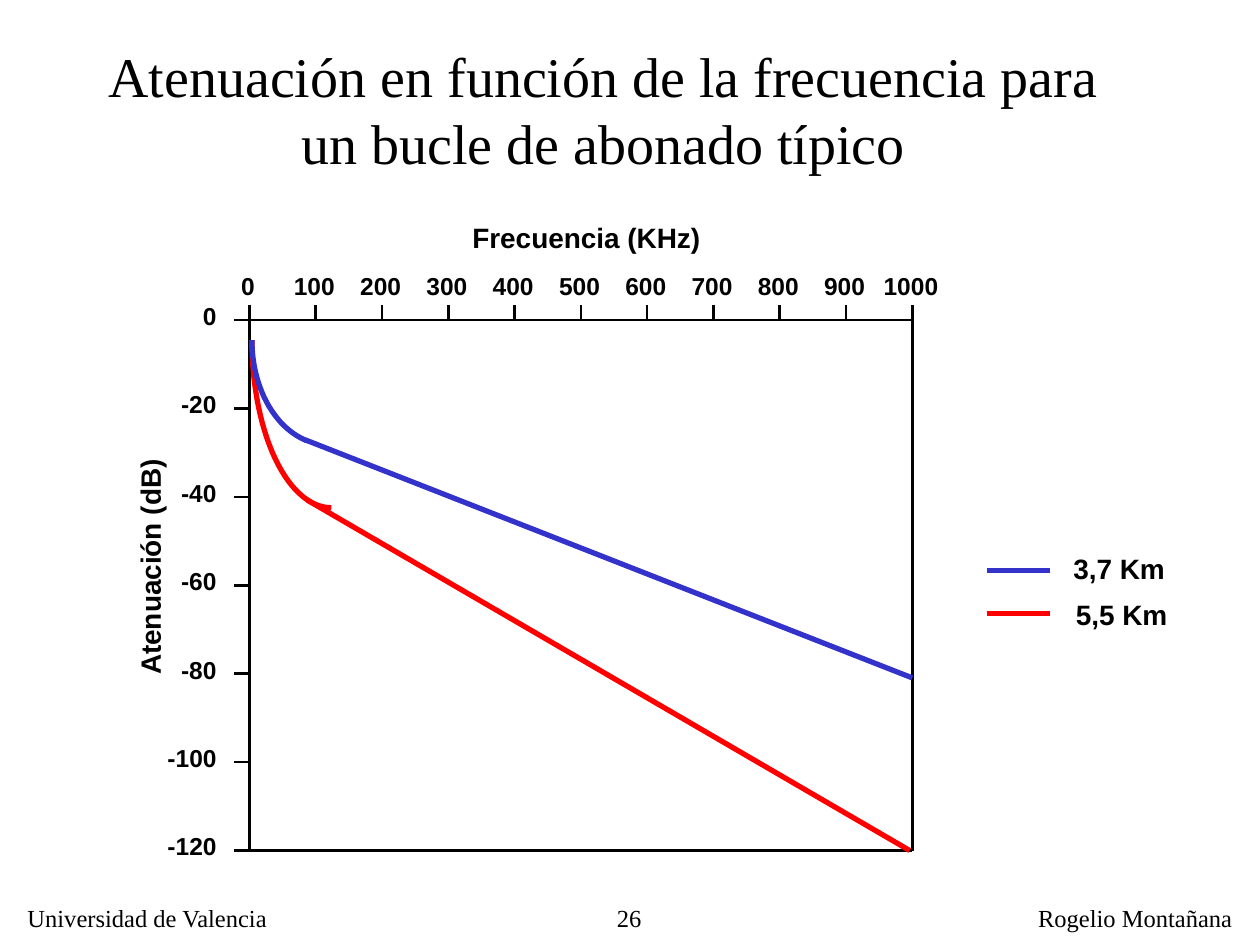
import math
from typing import NamedTuple

from lxml import etree
from pptx import Presentation
from pptx.dml.color import RGBColor
from pptx.enum import shapes, text
from pptx.oxml import ns
from pptx.util import Inches, Pt

BLACK, WHITE, RED, BLUE = "000000", "FFFFFF", "FF0000", "3333CC"
SANS, SERIF = "Arial", "Times New Roman"
LEFT, RIGHT, TOP, BOTTOM = 1.98, 7.24, 2.54, 6.75
X_STEPS, Y_STEPS, TICK = 10, 6, 0.12
LEFT_ALIGN, CENTER, RIGHT_ALIGN = text.PP_ALIGN.LEFT, text.PP_ALIGN.CENTER, text.PP_ALIGN.RIGHT


class Label(NamedTuple):
    words: str
    x: float
    y: float
    w: float
    h: float = 0.33
    size: int = 14
    font: str = SANS
    bold: bool = True
    align: text.PP_ALIGN = LEFT_ALIGN
    wrap: bool = False
    rotation: int = 0


class Line(NamedTuple):
    x1: float
    y1: float
    x2: float
    y2: float
    color: str = BLACK
    width: float = 1.5


class Curve(NamedTuple):
    """Quarter ellipse running down from the left end of its centre line."""
    cx: float
    cy: float
    rx: float
    ry: float
    color: str


def rgb(value: str) -> RGBColor:
    return RGBColor.from_string(value)


def format_text(tf, size: int, font: str, bold: bool, align: text.PP_ALIGN) -> None:
    for p in tf.paragraphs:
        p.alignment = align
        for r in p.runs:
            r.font.size, r.font.name, r.font.bold = Pt(size), font, bold
            r.font.color.rgb = rgb(BLACK)


def add_label(slide, label: Label) -> None:
    sp = slide.shapes.add_textbox(*map(Inches, (label.x, label.y, label.w, label.h)))
    sp.rotation = label.rotation
    tf = sp.text_frame
    tf.word_wrap = label.wrap
    tf.text = label.words
    format_text(tf, label.size, label.font, label.bold, label.align)


def add_line(slide, line: Line) -> None:
    sp = slide.shapes.add_connector(
        shapes.MSO_CONNECTOR.STRAIGHT, *map(Inches, (line.x1, line.y1, line.x2, line.y2)))
    sp.line.color.rgb = rgb(line.color)
    sp.line.width = Pt(line.width)
    etree.SubElement(sp._element.spPr, ns.qn("a:effectLst"))


def add_curve(slide, curve: Curve, steps: int = 30) -> None:
    angles = [math.pi / 2 * i / steps for i in range(steps + 1)]
    points = [(Inches(curve.cx - curve.rx * math.cos(a)),
               Inches(curve.cy + curve.ry * math.sin(a))) for a in angles]
    builder = slide.shapes.build_freeform(*points[0])
    builder.add_line_segments(points[1:], close=False)
    sp = builder.convert_to_shape()
    sp.shadow.inherit = False
    sp.fill.background()
    sp.line.color.rgb = rgb(curve.color)
    sp.line.width = Pt(3)


def add_patch(slide, x: float, y: float, w: float, h: float) -> None:
    """White block hiding the flat end of the upper curve."""
    sp = slide.shapes.add_shape(shapes.MSO_SHAPE.RECTANGLE, *map(Inches, (x, y, w, h)))
    sp.shadow.inherit = False
    sp.fill.solid()
    sp.fill.fore_color.rgb = rgb(WHITE)
    sp.line.fill.background()


def add_title(slide, words: str) -> None:
    sp = slide.shapes.title
    sp.left, sp.top, sp.width, sp.height = map(Inches, (0.75, 0.28, 8.08, 1.17))
    tf = sp.text_frame
    tf.text = words
    tf.word_wrap = True
    tf.auto_size = text.MSO_AUTO_SIZE.NONE
    tf.vertical_anchor = text.MSO_ANCHOR.TOP
    format_text(tf, 32, SERIF, False, CENTER)


def label_width(words: str) -> float:
    """Box width of an axis number: margins, digits and a narrower minus sign."""
    minus = words.count("-")
    return 0.2 + 0.108 * (len(words) - minus) + 0.065 * minus


def add_axes(slide) -> None:
    for y in (TOP, BOTTOM):
        add_line(slide, Line(LEFT - TICK, y, RIGHT, y))
    for x in (LEFT, RIGHT):
        add_line(slide, Line(x, TOP - TICK, x, BOTTOM))
    for i in range(X_STEPS + 1):
        x = LEFT + (RIGHT - LEFT) * i / X_STEPS
        words = str(100 * i)
        w = label_width(words)
        add_label(slide, Label(words, x - 0.01 - w / 2, 2.1, w))
        if 0 < i < X_STEPS:
            add_line(slide, Line(x, TOP - TICK, x, TOP))
    for i in range(Y_STEPS + 1):
        y = TOP + (BOTTOM - TOP) * i / Y_STEPS
        words = str(-20 * i)
        w = label_width(words)
        add_label(slide, Label(words, 1.82 - w, y - 0.2, w))
        if 0 < i < Y_STEPS:
            add_line(slide, Line(LEFT - TICK, y, LEFT, y))


def main() -> None:
    prs = Presentation()
    prs.slide_width, prs.slide_height = Inches(10), Inches(7.5)
    slide = prs.slides.add_slide(prs.slide_layouts[5])

    add_title(slide, "Atenuación en función de la frecuencia para un bucle de abonado típico")
    add_axes(slide)
    for label in (
        Label("Frecuencia (KHz)", 3.65, 1.7, 2.02, 0.37, 16),
        Label("Atenuación (dB)", 0.23, 4.31, 1.92, 0.37, 16, rotation=270),
        Label("3,7 Km", 8.42, 4.33, 1, 0.37, 16, wrap=True),
        Label("5,5 Km", 8.44, 4.69, 1, 0.37, 16, wrap=True),
        Label("Universidad de Valencia", 0.12, 7.12, 2.13, font=SERIF, bold=False),
        Label("26", 4.13, 7.12, 1.06, 0.31, font=SERIF, bold=False,
              align=RIGHT_ALIGN, wrap=True),
        Label("Rogelio Montañana", 8.14, 7.12, 1.74, font=SERIF, bold=False),
    ):
        add_label(slide, label)

    add_curve(slide, Curve(2.63, 2.7, 0.63, 1.33, RED))
    add_line(slide, Line(2.44, 3.97, 7.22, BOTTOM, RED, 3))
    add_curve(slide, Curve(2.6, 2.7, 0.6, 0.83, BLUE))
    add_patch(slide, 2.43, 3.44, 0.33, 0.17)
    add_line(slide, Line(2.42, 3.49, RIGHT, 5.38, BLUE, 3))
    for y, color in ((4.53, BLUE), (4.87, RED)):
        add_line(slide, Line(7.83, y, 8.33, y, color, 3))

    prs.save("out.pptx")


if __name__ == "__main__":
    main()
